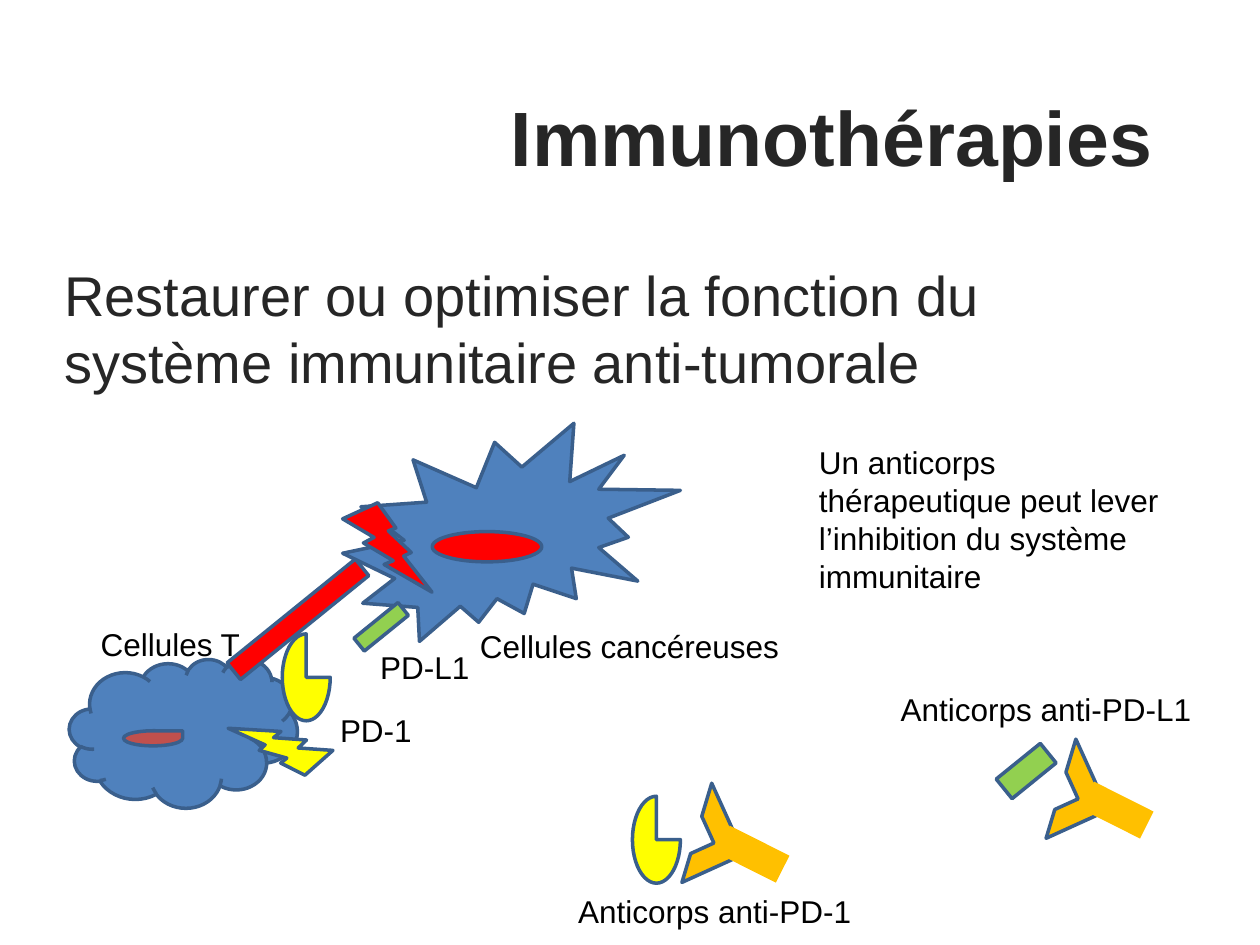
"""Build the slide on immunotherapies and the PD-1 / PD-L1 checkpoint."""
import pptx
import pptx.util
import pptx.dml.color
import pptx.enum.shapes
import pptx.enum.text

Pt = pptx.util.Pt
MSO = pptx.enum.shapes.MSO_SHAPE
ALIGN = pptx.enum.text.PP_ALIGN
ANCHOR = pptx.enum.text.MSO_ANCHOR
COLORS = {
    "heading": "262626", "text": "000000", "outline": "3A5F8C",
    "cell": "4F81BD", "t_nucleus": "C0504D", "red": "FF0000",
    "ligand": "92D050", "receptor": "FFFF00", "antibody": "FFC000",
}


def rgb(name):
    return pptx.dml.color.RGBColor.from_string(COLORS[name])


def write(tf, text, size=18, color="text", bold=False, align=ALIGN.LEFT):
    p = tf.paragraphs[0]
    p.alignment = align
    r = p.add_run()
    r.text = text
    r.font.name = "Arial"
    r.font.size = Pt(size)
    r.font.bold = bold
    r.font.color.rgb = rgb(color)


class Deck:
    def __init__(self, prs):
        self.s = prs.slides.add_slide(prs.slide_layouts[6])
        self.line_width = Pt(2)

    def text(self, text, x, y, w, h=28.8, wrap=False, anchor=ANCHOR.TOP, **fmt):
        tf = self.s.shapes.add_textbox(Pt(x), Pt(y), Pt(w), Pt(h)).text_frame
        tf.word_wrap = wrap
        tf.vertical_anchor = anchor
        write(tf, text, **fmt)

    def shape(self, kind, fill, x, y, w, h, rotation=0, outline=True, parent=None):
        shapes = (parent or self.s).shapes
        sp = shapes.add_shape(kind, Pt(x), Pt(y), Pt(w), Pt(h))
        sp.rotation = rotation
        sp.shadow.inherit = False
        sp.fill.solid()
        sp.fill.fore_color.rgb = rgb(fill)
        if outline:
            sp.line.color.rgb = rgb("outline")
            sp.line.width = self.line_width
        else:
            sp.line.fill.background()

    def receptor(self, x, y):
        self.shape(MSO.PIE, "receptor", x, y, 27.4, 49.7)

    def bar(self, fill, x, y, w, h):
        self.shape(MSO.FLOWCHART_PROCESS, fill, x, y, w, h, rotation=321)

    def antibody(self, x, y):
        group = self.s.shapes.add_group_shape()
        self.shape(MSO.HALF_FRAME, "antibody", x, y, 38.9, 44.6,
                   rotation=155.6, parent=group)
        self.shape(MSO.RECTANGLE, "antibody", x + 32.4, y + 25.9, 38.2, 17.3,
                   rotation=26.7, outline=False, parent=group)


def main():
    prs = pptx.Presentation()
    prs.slide_width, prs.slide_height = Pt(720), Pt(540)
    d = Deck(prs)

    d.text("Immunothérapies", 42.5, 21.6, 623.5, 112.3, wrap=True,
           anchor=ANCHOR.MIDDLE, size=44, color="heading", bold=True,
           align=ALIGN.RIGHT)
    d.text("Restaurer ou optimiser la fonction du système immunitaire anti-tumorale",
           29.5, 145.4, 663.1, 329, wrap=True, size=32, color="heading")

    d.shape(MSO.EXPLOSION2, "cell", 195.8, 241.9, 193, 124.6)
    d.shape(MSO.FLOWCHART_CONNECTOR, "red", 247, 303.8, 62.6, 17.3)
    d.shape(MSO.CLOUD, "cell", 39.6, 376.6, 130.3, 85)
    d.shape(MSO.TEAR, "t_nucleus", 70.6, 417.6, 33.8, 8.6)
    d.bar("ligand", 201.6, 353.5, 32.4, 9.4)
    d.receptor(161.3, 362.2)
    d.text("Cellules T", 50.4, 353.5, 95)
    d.text("Cellules cancéreuses", 267.1, 355, 187.2)
    d.bar("red", 123.1, 347.8, 94.3, 12.2)
    d.shape(MSO.LIGHTNING_BOLT, "red", 195.8, 287.3, 51.1, 51.1)
    d.antibody(378.7, 453.6)
    d.shape(MSO.LIGHTNING_BOLT, "receptor", 136.1, 405.4, 51.1, 41, rotation=158.6)
    d.text("Un anticorps thérapeutique peut lever l’inhibition du système immunitaire",
           460.8, 249.8, 229, 94.3, wrap=True)
    d.text("PD-L1", 210.2, 366.5, 66.2)
    d.text("PD-1", 187.2, 402.5, 56.2)
    d.receptor(361.4, 455)
    d.antibody(586.8, 428.4)
    d.bar("ligand", 570.2, 433.4, 32.4, 14.4)
    d.text("Anticorps anti-PD-1", 323.3, 506.2, 172.1)
    d.text("Anticorps anti-PD-L1", 507.6, 391, 182.2)

    prs.save("out.pptx")


if __name__ == "__main__":
    main()
